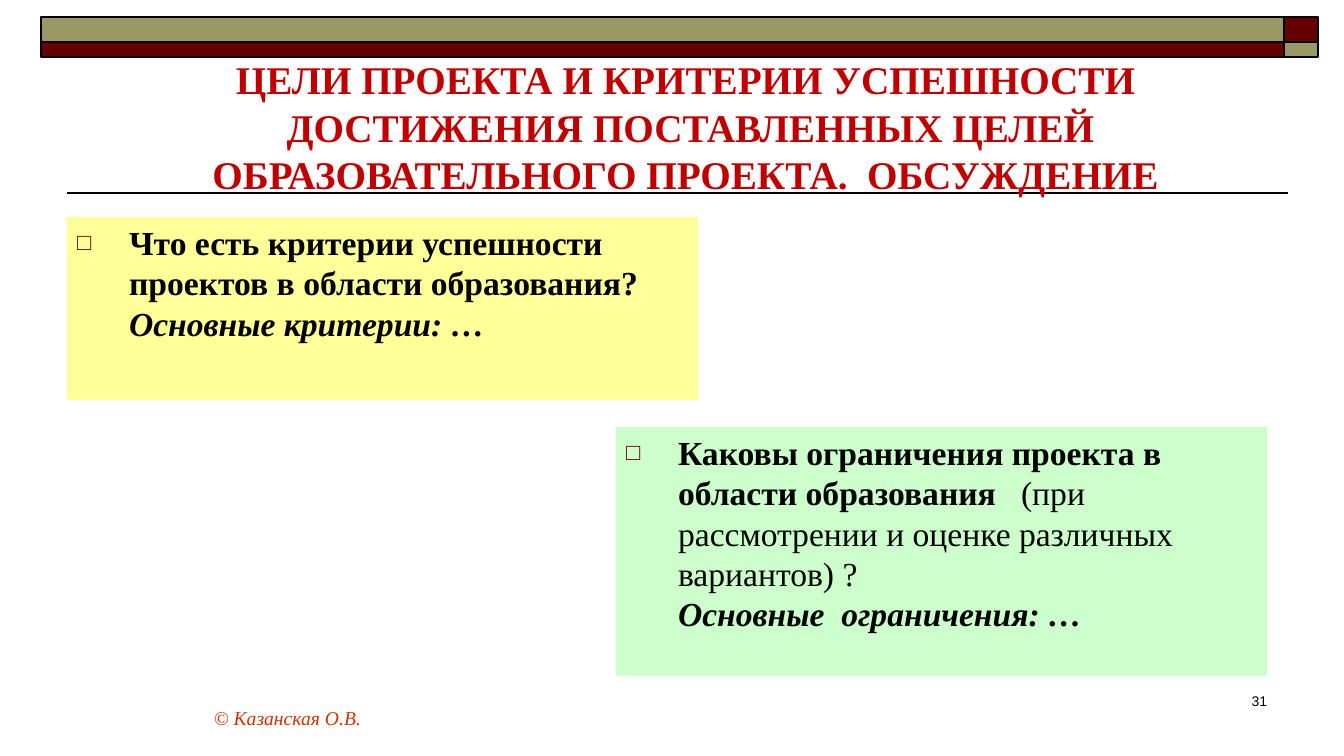
from pptx import Presentation, util as u
from pptx.dml.color import RGBColor
from pptx.enum import shapes, text
from pptx.oxml.ns import qn
from lxml import etree

# Content: a run is (text, style), with b for bold and i for italic
TITLE = [
    "ЦЕЛИ ПРОЕКТА И КРИТЕРИИ УСПЕШНОСТИ",
    " ДОСТИЖЕНИЯ ПОСТАВЛЕННЫХ ЦЕЛЕЙ ОБРАЗОВАТЕЛЬНОГО ПРОЕКТА.  ОБСУЖДЕНИЕ",
]
PANELS = [
    {"box": (67, 217, 631, 183), "fill": "yellow", "paras": [
        [("Что есть критерии успешности проектов в области образования?", "b")],
        [("Основные критерии: …", "bi")]]},
    {"box": (616, 427, 651, 249), "fill": "green", "paras": [
        [("Каковы ограничения проекта в области образования   ", "b"),
         ("(при рассмотрении и оценке различных вариантов) ?", "")],
        [("Основные  ограничения: …", "bi")]]},
]
AUTHOR = "© Казанская О.В."
NUMBER = "31"


class Theme:
    serif, sans = "Times New Roman", "Arial"
    color = {"black": "000000", "wine": "660000", "olive": "999966",
             "red": "C00000", "rust": "CC3300",
             "yellow": "FFFF99", "green": "CCFFCC"}
    title, body, author, number = 28, 24, 14, 10


PX = 9071  # EMU in one px
INDENT = 52


def px(*vals):
    return [v * PX for v in vals]


def rgb(name):
    return RGBColor.from_string(Theme.color[name])


def add_run(para, words, size, color, style="", face=Theme.serif):
    run = para.add_run()
    run.text = words
    font = run.font
    font.name, font.size = face, u.Pt(size)
    font.bold, font.italic = "b" in style, "i" in style
    font.color.rgb = rgb(color)


def place(shape, box):
    shape.left, shape.top, shape.width, shape.height = px(*box)
    frame = shape.text_frame
    frame.word_wrap = True
    frame.auto_size = text.MSO_AUTO_SIZE.NONE
    tree.append(shape._element)  # bring in front of the frame lines
    return frame


def set_bullet(para, mark):
    props = para._p.get_or_add_pPr()
    props.set("marL", str(INDENT * PX))
    props.set("indent", str(-INDENT * PX if mark else 0))
    if not mark:
        etree.SubElement(props, qn("a:buNone"))
        return
    tint = etree.SubElement(props, qn("a:buClr"))
    etree.SubElement(tint, qn("a:srgbClr"), val=Theme.color["wine"])
    etree.SubElement(props, qn("a:buSzPct"), val="70000")
    etree.SubElement(props, qn("a:buFont"), typeface=Theme.sans)
    etree.SubElement(props, qn("a:buChar"), char=mark)


deck = Presentation()
deck.slide_width, deck.slide_height = px(1344, 756)
slide = deck.slides.add_slide(deck.slide_layouts[3])
tree = slide.shapes._spTree
head, *bodies = slide.placeholders

# Rule under the title
rule = slide.shapes.add_connector(
    shapes.MSO_CONNECTOR.STRAIGHT, *px(1288, 193, 67, 193))
rule.line.color.rgb = rgb("black")
rule.line.width = u.Pt(1)
etree.SubElement(rule._element.spPr, qn("a:effectLst"))

# Top band: two rows by two columns, colours alternating
cols, rows = [(41, 1243), (1284, 34)], [(17, 25), (42, 15)]
for r, (top, high) in enumerate(rows):
    for c, (left, wide) in enumerate(cols):
        bar = slide.shapes.add_shape(
            shapes.MSO_SHAPE.RECTANGLE, *px(left, top, wide, high))
        bar.shadow.inherit = False
        bar.fill.solid()
        bar.fill.fore_color.rgb = rgb(("olive", "wine")[(r + c) % 2])
        bar.line.color.rgb = rgb("black")
        bar.line.width = u.Pt(1)

# Title
frame = place(head, (94, 60, 1183, 142))
frame.vertical_anchor = text.MSO_ANCHOR.BOTTOM
para = frame.paragraphs[0]
para.alignment = text.PP_ALIGN.CENTER
for n, line in enumerate(TITLE):
    if n:
        para.add_line_break()
    add_run(para, line, Theme.title, "red", "b")

# Question panels
for body, panel in zip(bodies, PANELS):
    frame = place(body, panel["box"])
    frame.vertical_anchor = text.MSO_ANCHOR.TOP
    body.fill.solid()
    body.fill.fore_color.rgb = rgb(panel["fill"])
    for n, runs in enumerate(panel["paras"]):
        para = frame.add_paragraph() if n else frame.paragraphs[0]
        para.space_before = u.Pt(0 if n else 5)
        set_bullet(para, "" if n else "□")
        for words, style in runs:
            add_run(para, words, Theme.body, "black", style)

# Slide number and author
note = slide.shapes.add_textbox(0, 0, 0, 0)
para = place(note, (997, 688, 280, 50)).paragraphs[0]
para.alignment = text.PP_ALIGN.RIGHT
add_run(para, NUMBER, Theme.number, "black", face=Theme.sans)

note = slide.shapes.add_textbox(0, 0, 0, 0)
para = place(note, (204, 704, 907, 31)).paragraphs[0]
para.line_spacing, para.space_before = 0.9, u.Pt(3)
add_run(para, AUTHOR, Theme.author, "rust", "i")

deck.save("out.pptx")
